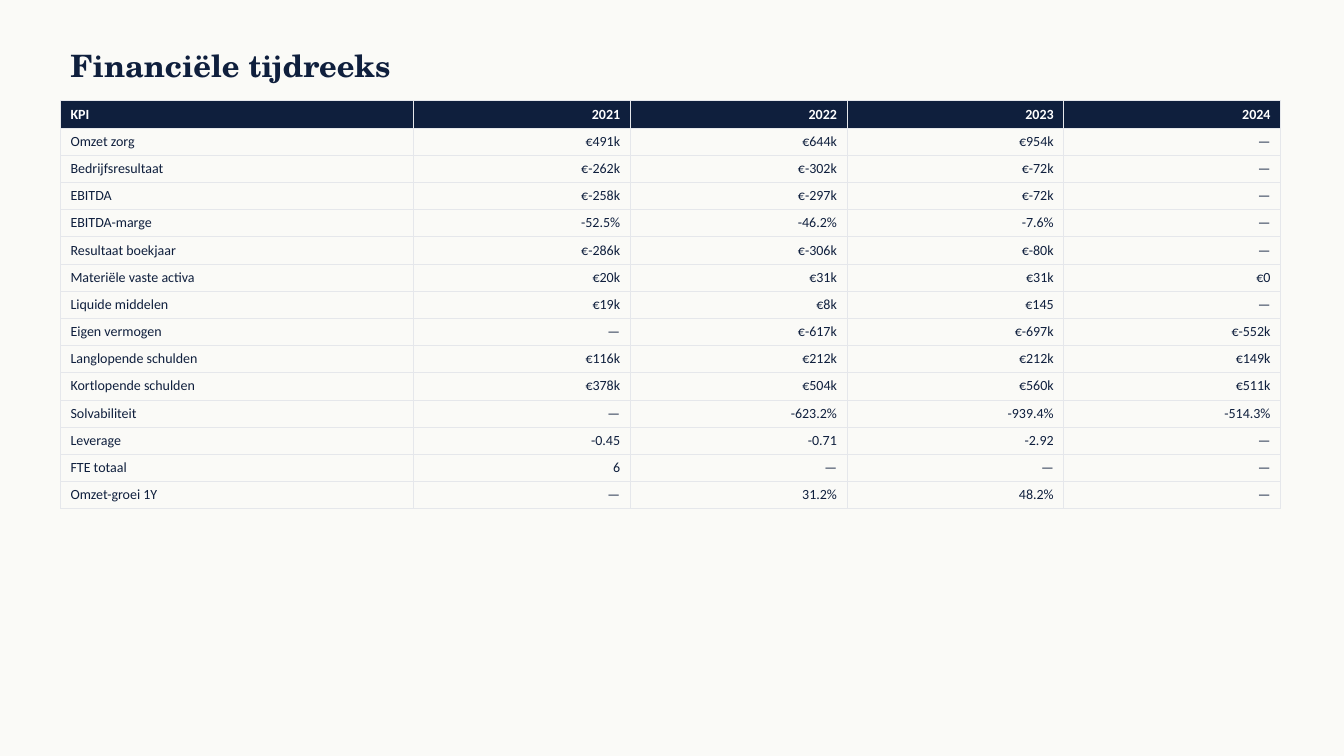
from lxml import etree
from pptx import Presentation
from pptx.dml.color import RGBColor
from pptx.enum.text import MSO_ANCHOR, PP_ALIGN
from pptx.oxml.ns import qn
from pptx.util import Pt

PX = 9144  # EMU per px, 100 px to the inch
LEFT, RIGHT = PP_ALIGN.LEFT, PP_ALIGN.RIGHT
MIDDLE = MSO_ANCHOR.MIDDLE
COLORS = {"paper": "FAFAF7", "navy": "0F1F3D", "white": "FFFFFF", "rule": "E5E7EB"}
TITLE_FONT = {"name": "TeX Gyre Schola", "size": Pt(22), "bold": True}
HEADER_FONT = {"name": "Calibri", "size": Pt(10), "bold": True}
BODY_FONT = {**HEADER_FONT, "bold": False}
COLUMN_WIDTHS = [350] + [215] * 4
ROW_HEIGHT = 27
KPI_ROWS = [
    ["KPI", "2021", "2022", "2023", "2024"],
    ["Omzet zorg", "€491k", "€644k", "€954k", "—"],
    ["Bedrijfsresultaat", "€-262k", "€-302k", "€-72k", "—"],
    ["EBITDA", "€-258k", "€-297k", "€-72k", "—"],
    ["EBITDA-marge", "-52.5%", "-46.2%", "-7.6%", "—"],
    ["Resultaat boekjaar", "€-286k", "€-306k", "€-80k", "—"],
    ["Materiële vaste activa", "€20k", "€31k", "€31k", "€0"],
    ["Liquide middelen", "€19k", "€8k", "€145", "—"],
    ["Eigen vermogen", "—", "€-617k", "€-697k", "€-552k"],
    ["Langlopende schulden", "€116k", "€212k", "€212k", "€149k"],
    ["Kortlopende schulden", "€378k", "€504k", "€560k", "€511k"],
    ["Solvabiliteit", "—", "-623.2%", "-939.4%", "-514.3%"],
    ["Leverage", "-0.45", "-0.71", "-2.92", "—"],
    ["FTE totaal", "6", "—", "—", "—"],
    ["Omzet-groei 1Y", "—", "31.2%", "48.2%", "—"],
]


def write(paragraph, text, font_format, color, align=LEFT):
    paragraph.alignment = align
    run = paragraph.add_run()
    run.text = text
    for attribute, value in font_format.items():
        setattr(run.font, attribute, value)
    run.font.color.rgb = RGBColor.from_string(COLORS[color])


def add_borders(cell):
    """Rule all four sides of a cell; must run before its fill is set."""
    properties = cell._tc.get_or_add_tcPr()
    for side in ("a:lnL", "a:lnR", "a:lnT", "a:lnB"):
        line = etree.SubElement(properties, qn(side), w=str(Pt(0.5)))
        fill = etree.SubElement(line, qn("a:solidFill"))
        etree.SubElement(fill, qn("a:srgbClr"), val=COLORS["rule"])


prs = Presentation()
prs.slide_width, prs.slide_height = 1333 * PX, 750 * PX
slide = prs.slides.add_slide(prs.slide_layouts[6])
slide.background.fill.solid()
slide.background.fill.fore_color.rgb = RGBColor.from_string(COLORS["paper"])

title = slide.shapes.add_textbox(60 * PX, 40 * PX, 1200 * PX, 50 * PX).text_frame
title.word_wrap = True
title.vertical_anchor = MIDDLE
write(title.paragraphs[0], "Financiële tijdreeks", TITLE_FONT, "navy")

kpi_table = slide.shapes.add_table(
    len(KPI_ROWS), len(COLUMN_WIDTHS), 60 * PX, 100 * PX,
    sum(COLUMN_WIDTHS) * PX, len(KPI_ROWS) * ROW_HEIGHT * PX).table
kpi_table.horz_banding = False
for column, width in zip(kpi_table.columns, COLUMN_WIDTHS):
    column.width = width * PX

for row_index, row in enumerate(KPI_ROWS):
    is_header = row_index == 0
    for column_index, text in enumerate(row):
        cell = kpi_table.cell(row_index, column_index)
        add_borders(cell)
        if is_header:
            cell.fill.solid()
            cell.fill.fore_color.rgb = RGBColor.from_string(COLORS["navy"])
        else:
            cell.fill.background()
        write(cell.text_frame.paragraphs[0], text,
              HEADER_FONT if is_header else BODY_FONT,
              "white" if is_header else "navy",
              RIGHT if column_index else LEFT)

prs.save("out.pptx")
